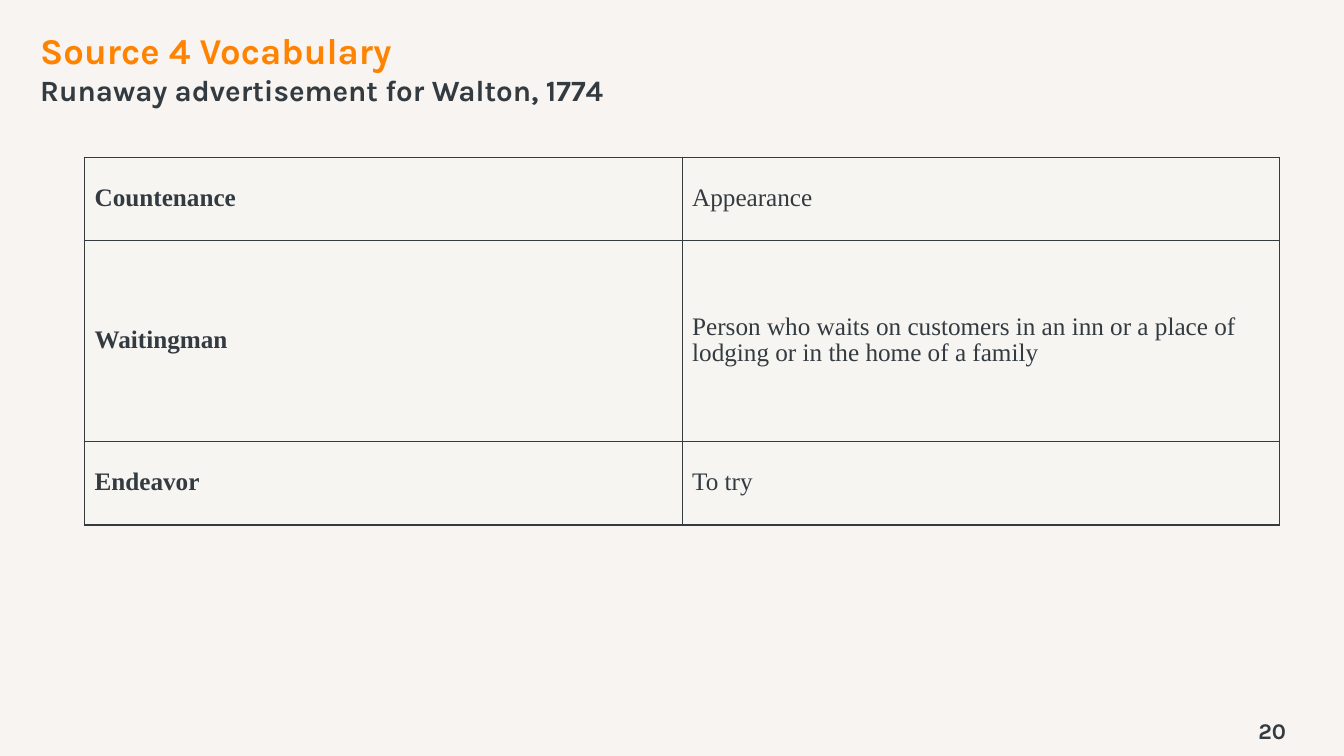
from lxml.etree import SubElement
from pptx import Presentation
from pptx.dml.color import RGBColor
from pptx.enum.text import MSO_ANCHOR as Anchor, MSO_AUTO_SIZE as AutoSize, PP_ALIGN as Align
from pptx.oxml.ns import qn
from pptx.util import Cm, Pt

# Content
TITLE_LINES = ["Source 4\u00a0Vocabulary ", "Runaway advertisement for Walton, 1774"]
VOCABULARY = [
    ("Countenance", "Appearance"),
    ("Waitingman", "Person who waits on customers in an inn or a place of "
                   "lodging or in the home of a family"),
    ("Endeavor", "To try"),
]
PAGE_NUMBER = "20"

# Formats
COLORS = {"background": "F7F4F1", "accent": "FF8300", "ink": "333B41", "cell": "F7F5F2"}
FORMATS = {
    "title": {"name": "Karla", "size": Pt(26), "bold": True, "color": "accent"},
    "subtitle": {"name": "Karla", "size": Pt(21), "bold": True, "color": "ink"},
    "number": {"name": "Karla", "size": Pt(16), "bold": True, "color": "ink"},
    "term": {"name": "Times New Roman", "size": Pt(18), "bold": True, "color": "ink"},
    "meaning": {"name": "Times New Roman", "size": Pt(18), "bold": False, "color": "ink"},
}
ROW_HEIGHTS = [Cm(2.11), Cm(5.05), Cm(2.11)]
COLUMN_WIDTH = Cm(15.06)


def add_run(paragraph, text, format_name):
    run = paragraph.add_run()
    run.text = text
    for name, value in FORMATS[format_name].items():
        if name == "color":
            run.font.color.rgb = RGBColor.from_string(COLORS[value])
        else:
            setattr(run.font, name, value)


def add_borders(cell):
    properties = cell._tc.get_or_add_tcPr()
    for index, side in enumerate(("a:lnL", "a:lnR", "a:lnT", "a:lnB")):
        line = properties.makeelement(qn(side), {"w": str(Pt(1))})
        properties.insert(index, line)
        fill = SubElement(line, qn("a:solidFill"))
        SubElement(fill, qn("a:srgbClr"), val=COLORS["ink"])


# Slide
presentation = Presentation()
presentation.slide_width, presentation.slide_height = Cm(33.87), Cm(19.05)
slide = presentation.slides.add_slide(presentation.slide_layouts[5])
slide.background.fill.solid()
slide.background.fill.fore_color.rgb = RGBColor.from_string(COLORS["background"])

# Title and subtitle
title = slide.shapes.title
title.left, title.top, title.width, title.height = Cm(0.76), Cm(0.58), Cm(32.05), Cm(2.26)
title.text_frame.vertical_anchor = Anchor.TOP
title.text_frame.auto_size = AutoSize.SHAPE_TO_FIT_TEXT
heading = title.text_frame.paragraphs[0]
heading.alignment = Align.LEFT
add_run(heading, TITLE_LINES[0], "title")
heading.add_line_break()
add_run(heading, TITLE_LINES[1], "subtitle")

# Vocabulary table
table = slide.shapes.add_table(len(VOCABULARY), 2, Cm(2.13), Cm(3.96),
                               2 * COLUMN_WIDTH, sum(ROW_HEIGHTS)).table
table.first_row = table.horz_banding = False
for column in table.columns:
    column.width = COLUMN_WIDTH
for row, height, entry in zip(table.rows, ROW_HEIGHTS, VOCABULARY):
    row.height = height
    for cell, text, format_name in zip(row.cells, entry, ("term", "meaning")):
        cell.vertical_anchor = Anchor.MIDDLE
        cell.fill.solid()
        cell.fill.fore_color.rgb = RGBColor.from_string(COLORS["cell"])
        add_borders(cell)
        paragraph = cell.text_frame.paragraphs[0]
        paragraph.line_spacing = 0.93
        add_run(paragraph, text, format_name)

# Page number
number_box = slide.shapes.add_textbox(Cm(30.84), Cm(17.91), Cm(2.44), Cm(1.02))
number_box.text_frame.word_wrap = True
number_box.text_frame.vertical_anchor = Anchor.MIDDLE
number_box.text_frame.paragraphs[0].alignment = Align.CENTER
add_run(number_box.text_frame.paragraphs[0], PAGE_NUMBER, "number")

presentation.save("out.pptx")
